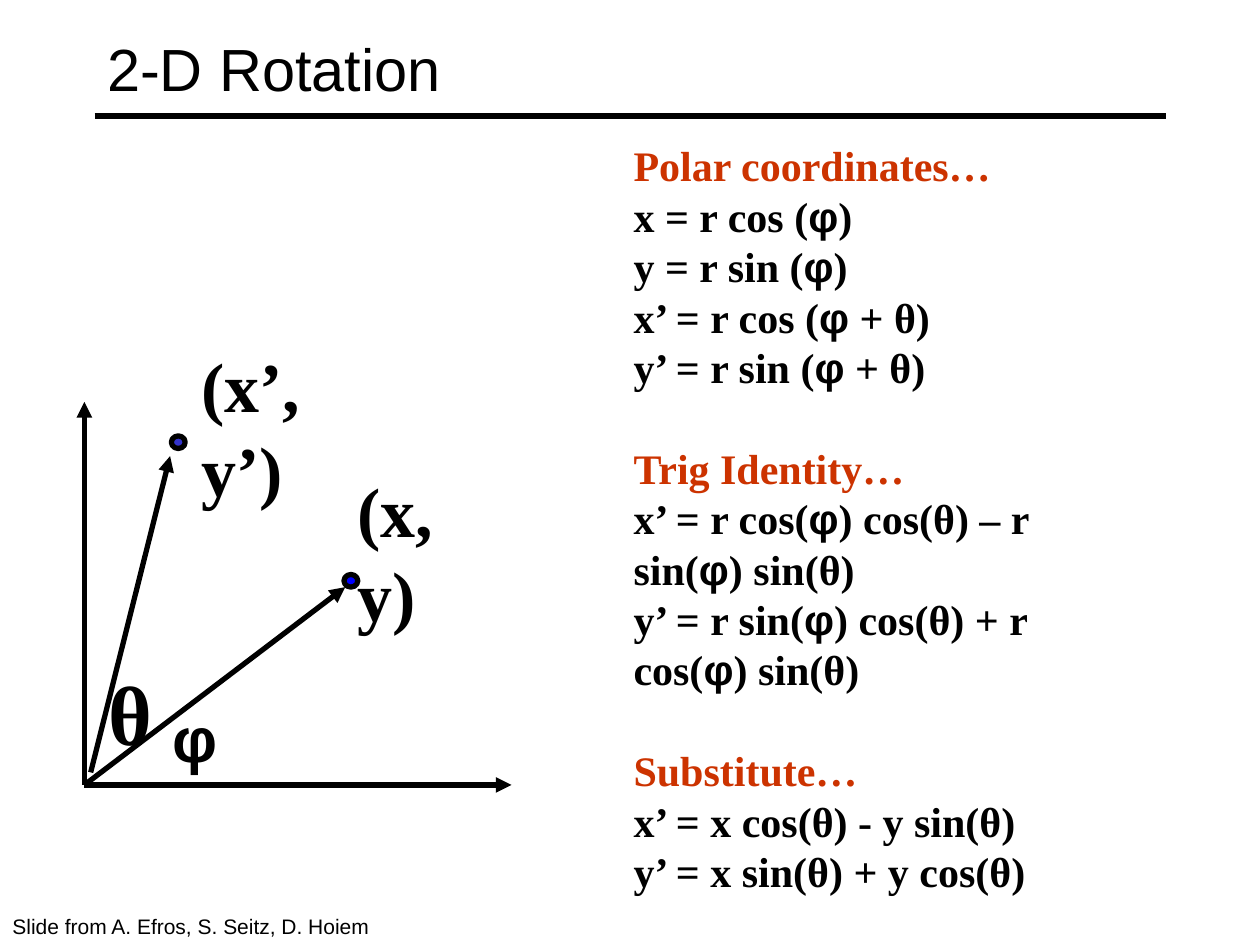
from lxml import etree
from pptx import Presentation
from pptx.dml.color import RGBColor
from pptx.enum.shapes import MSO_CONNECTOR, MSO_SHAPE
from pptx.enum.text import MSO_ANCHOR, PP_ALIGN
from pptx.oxml.ns import qn
from pptx.util import Inches, Pt

STRAIGHT, OVAL = MSO_CONNECTOR.STRAIGHT, MSO_SHAPE.OVAL
TOP, MIDDLE = MSO_ANCHOR.TOP, MSO_ANCHOR.MIDDLE
LEFT, CENTER = PP_ALIGN.LEFT, PP_ALIGN.CENTER
BLACK = RGBColor(0x00, 0x00, 0x00)
RED = RGBColor(0xCC, 0x33, 0x00)
BLUE = RGBColor(0x00, 0x00, 0xFF)
INDIGO = RGBColor(0x33, 0x33, 0xCC)
SANS, SERIF = "Arial", "Times New Roman"

TITLE = "2-D Rotation"
CREDIT = "Slide from A. Efros, S. Seitz, D. Hoiem"
SECTIONS = [
    ("Polar coordinates…", ["x = r cos (φ)", "y = r sin (φ)",
                            "x’ = r cos (φ + θ)", "y’ = r sin (φ + θ)"]),
    ("Trig Identity…", ["x’ = r cos(φ) cos(θ) – r sin(φ) sin(θ)",
                        "y’ = r sin(φ) cos(θ) + r cos(φ) sin(θ)"]),
    ("Substitute…", ["x’ = x cos(θ) - y sin(θ)", "y’ = x sin(θ) + y cos(θ)"]),
]
ORIGIN = (0.67, 6.23)
ARROWS = [  # start, end
    (ORIGIN, (0.67, 3.19)),
    (ORIGIN, (4.06, 6.23)),
    (ORIGIN, (2.74, 4.66)),
    ((0.72, 6.13), (1.35, 3.62)),
]
POINTS = [(1.36, 3.46, INDIGO), (2.73, 4.56, BLUE)]
LABELS = [  # text, box, size, alignment
    ("θ", (0.76, 5.2, 0.49, 0.9), 48, CENTER),
    ("(x, y)", (2.74, 3.99, 1.25, 0.77), 40, LEFT),
    ("(x’, y’)", (1.5, 3, 1.58, 0.77), 40, LEFT),
]


def add_line(shapes, start, end, arrow=False):
    line = shapes.add_connector(STRAIGHT, *map(Inches, start + end))
    line.line.color.rgb = BLACK
    line.line.width = Pt(3)
    if arrow:
        etree.SubElement(line.line._get_or_add_ln(), qn("a:tailEnd"), type="triangle")
    etree.SubElement(line._element.spPr, qn("a:effectLst"))


def add_box(shapes, box, anchor):
    tf = shapes.add_textbox(*map(Inches, box)).text_frame
    tf.word_wrap = True
    tf.vertical_anchor = anchor
    return tf


def style(p, size, font, color=BLACK, bold=True, align=LEFT):
    p.alignment = align
    p.font.size = Pt(size)
    p.font.name = font
    p.font.bold = bold
    p.font.color.rgb = color
    if font == SERIF:
        p.line_spacing = Pt(1.2 * size)


def add_formula(p, text):
    """Fill a paragraph, setting each φ in the sans font."""
    for i, part in enumerate(text.split("φ")):
        if i:
            r = p.add_run()
            r.text = "φ"
            r.font.name = SANS
        p.add_run().text = part


prs = Presentation()
prs.slide_width, prs.slide_height = Inches(10), Inches(7.5)
slide = prs.slides.add_slide(prs.slide_layouts[5])

title = slide.shapes.title
title.left, title.top, title.width, title.height = map(Inches, (0.75, 0.08, 8.5, 0.92))
title.text_frame.text = TITLE
title.text_frame.vertical_anchor = MIDDLE
style(title.text_frame.paragraphs[0], 34, SANS, bold=False)
add_line(slide.shapes, (0.75, 0.92), (9.25, 0.92))

tf = add_box(slide.shapes, (4.93, 2.09, 4.03, 4.04), MIDDLE)
for i, (heading, formulas) in enumerate(SECTIONS):
    p = tf.add_paragraph() if i else tf.paragraphs[0]
    p.text = heading
    style(p, 24, SERIF, RED)
    if i:
        p.space_before = Pt(28.8)
    for formula in formulas:
        p = tf.add_paragraph()
        add_formula(p, formula)
        style(p, 24, SERIF)

diagram = slide.shapes.add_group_shape().shapes
for x, y, color in POINTS:
    sp = diagram.add_shape(OVAL, *map(Inches, (x, y, 0.11, 0.1)))
    sp.shadow.inherit = False
    sp.fill.solid()
    sp.fill.fore_color.rgb = color
    sp.line.color.rgb = BLACK
    sp.line.width = Pt(3)
for start, end in ARROWS:
    add_line(diagram, start, end, arrow=True)
for text, box, size, align in LABELS:
    p = add_box(diagram, box, MIDDLE).paragraphs[0]
    p.text = text
    style(p, size, SERIF, align=align)

p = add_box(slide.shapes, (1.22, 5.5, 0.66, 0.7), TOP).paragraphs[0]
p.text = "φ"
style(p, 36, SANS, align=CENTER)

p = add_box(slide.shapes, (0, 7.2, 3.08, 0.3), TOP).paragraphs[0]
p.text = CREDIT
style(p, 12, SANS, bold=False)

prs.save("out.pptx")
